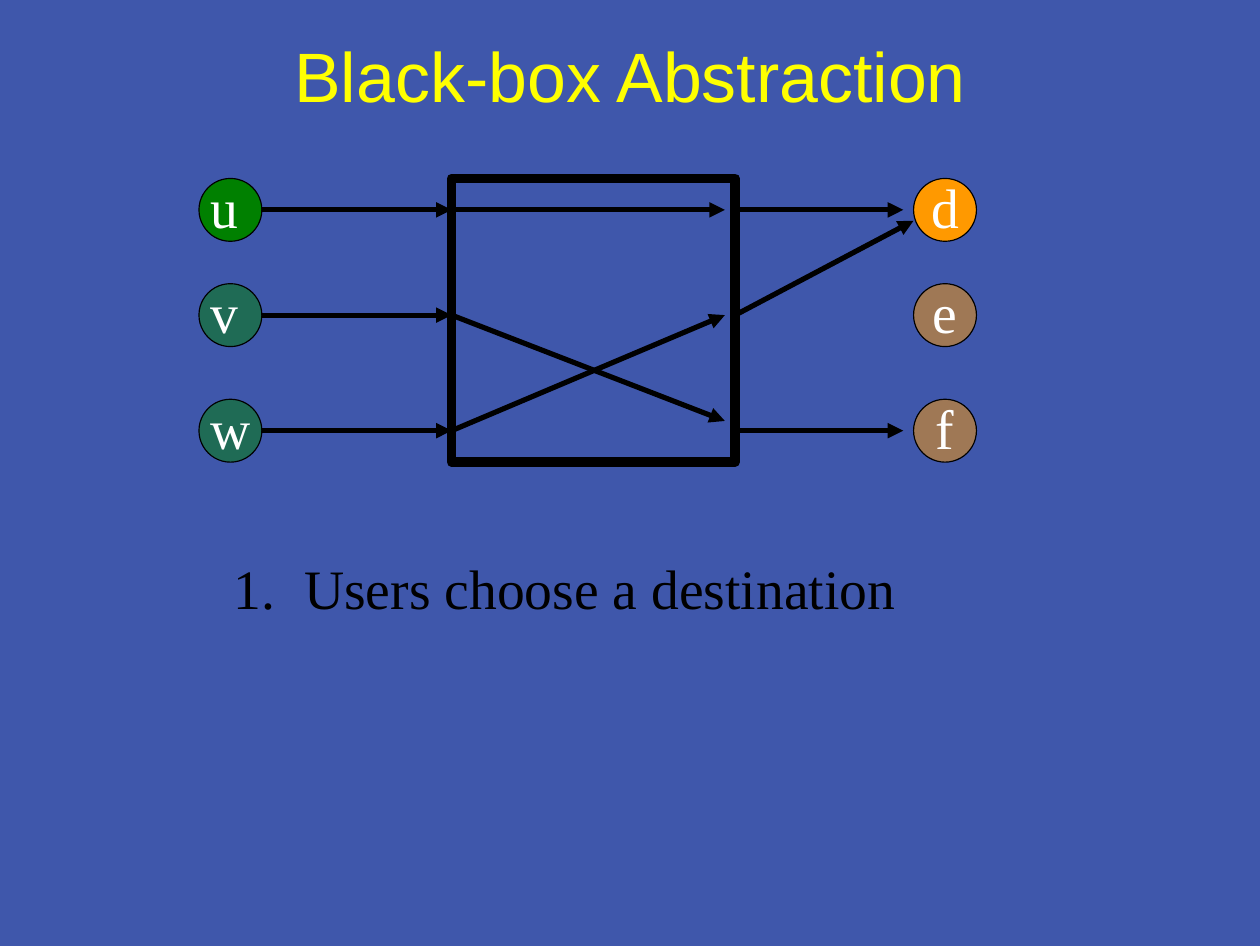
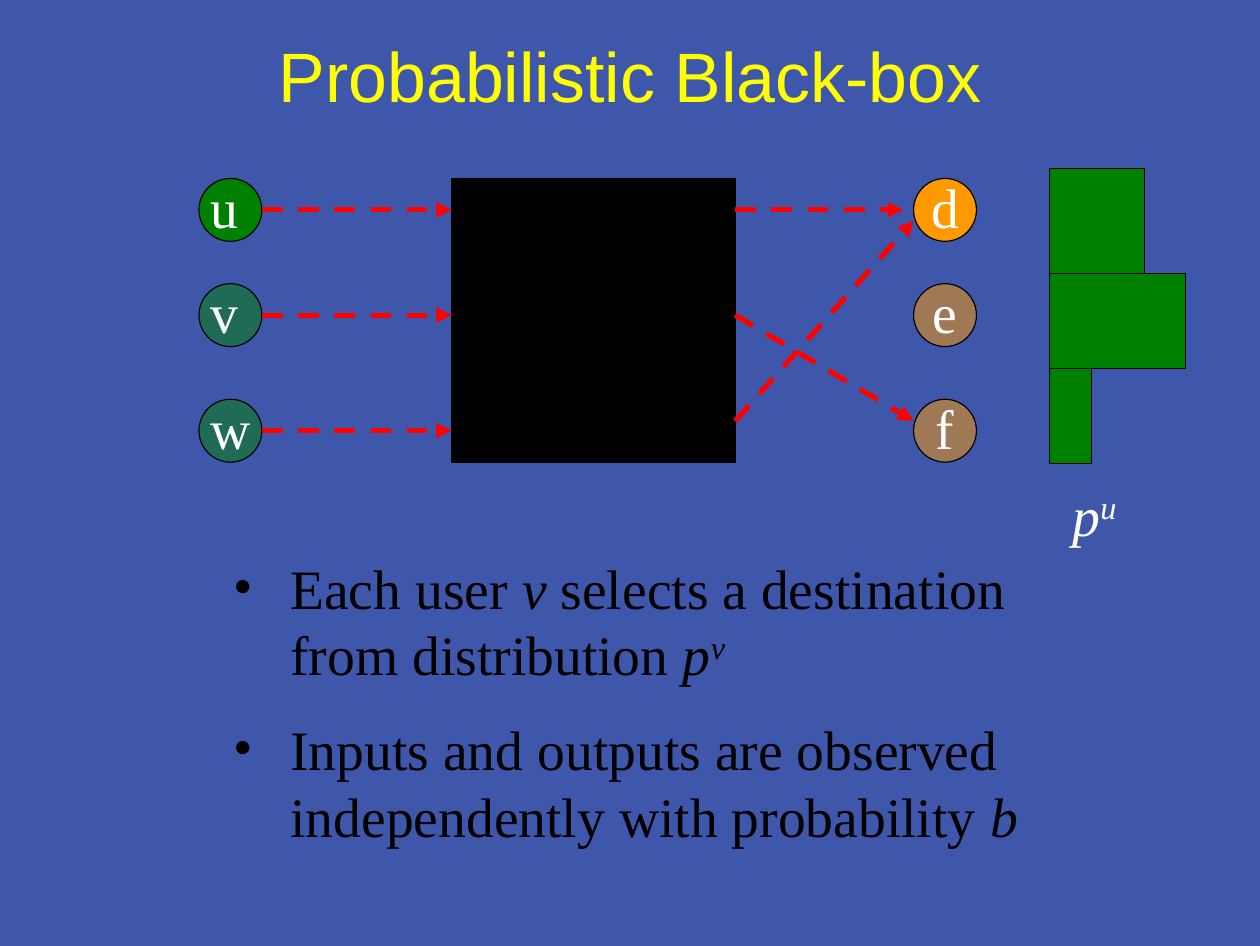
from lxml.etree import SubElement
from pptx import Presentation
from pptx.dml.color import RGBColor
from pptx.enum.dml import MSO_LINE
from pptx.enum.shapes import MSO_CONNECTOR, MSO_SHAPE
from pptx.enum.text import MSO_ANCHOR, MSO_AUTO_SIZE, PP_ALIGN
from pptx.oxml.ns import qn
from pptx.util import Inches, Pt

# Shared style
BLUE, YELLOW, BLACK, WHITE = "3F57AB", "FFFF00", "000000", "FFFFFF"
GREEN, ORANGE, RED = "008000", "FF9900", "FF0000"
TITLE_FONT, BODY_FONT = "Arial", "Times New Roman"

# Shared diagram geometry, in inches
NODE = 0.55
USER_X, DEST_X = 1.74, 7.99
ROW_TOPS = (1.56, 2.48, 3.49)
ROWS = [top + NODE / 2 for top in ROW_TOPS]
BOX_X, BOX_Y, BOX_SIZE = 3.95, 1.56, 2.48
BOX_RIGHT = BOX_X + BOX_SIZE
INNER_END, ARROW_END = 6.34, 7.9
LOW_EXIT, DEST_LOW = 3.68, 1.93


def rgb(value):
    return RGBColor.from_string(value)


def add_text(p, text, size=35, font=BODY_FONT, color=WHITE, italic=False,
             superscript=False):
    r = p.add_run()
    r.text = text
    r.font.size, r.font.name, r.font.italic = Pt(size), font, italic
    r.font.color.rgb = rgb(color)
    if superscript:
        r._r.get_or_add_rPr().set("baseline", "30000")


def set_frame(tf, left=0, top=0, right=0, bottom=0, anchor=MSO_ANCHOR.TOP,
              wrap=True):
    tf.margin_left, tf.margin_top = Inches(left), Inches(top)
    tf.margin_right, tf.margin_bottom = Inches(right), Inches(bottom)
    tf.vertical_anchor, tf.word_wrap = anchor, wrap
    tf.auto_size = MSO_AUTO_SIZE.NONE


def place(sp, x, y, w, h):
    sp.left, sp.top = Inches(x), Inches(y)
    sp.width, sp.height = Inches(w), Inches(h)


def add_slide(prs, title):
    s = prs.slides.add_slide(prs.slide_layouts[1])
    sp = s.shapes.title
    place(sp, 0.83, 0, 9.37, 1.38)
    set_frame(sp.text_frame, anchor=MSO_ANCHOR.MIDDLE)
    p = sp.text_frame.paragraphs[0]
    p.alignment, p.line_spacing = PP_ALIGN.CENTER, 0.95
    add_text(p, title, size=44, font=TITLE_FONT, color=YELLOW)
    return s


def add_list(s, width, height, items, indent=0.5, numbered=False):
    """Each item is a list of (text, format) pairs."""
    sp = s.placeholders[1]
    place(sp, 1.93, 4.78, width, height)
    tf = sp.text_frame
    set_frame(tf, 0.11, 0.06, 0.11, 0.06)
    for i, runs in enumerate(items):
        p = tf.add_paragraph() if i else tf.paragraphs[0]
        p.space_before = Pt(17.5 if i else 0)
        pPr = p._p.get_or_add_pPr()
        pPr.set("marL", str(Inches(indent)))
        pPr.set("indent", str(-Inches(indent)))
        SubElement(pPr, qn("a:buFont"), typeface=BODY_FONT)
        if numbered:
            SubElement(pPr, qn("a:buAutoNum"), type="arabicPeriod")
        else:
            SubElement(pPr, qn("a:buChar"), char="•")
        for text, style in runs:
            add_text(p, text, color=BLACK, **style)


def add_shape(s, kind, x, y, w, h, fill=None, alpha=100, line_width=0.75):
    sp = s.shapes.add_shape(kind, Inches(x), Inches(y), Inches(w), Inches(h))
    sp.shadow.inherit = False
    sp.line.color.rgb, sp.line.width = rgb(BLACK), Pt(line_width)
    if fill is None:
        sp.fill.background()
    else:
        sp.fill.solid()
        sp.fill.fore_color.rgb = rgb(fill)
    if alpha < 100:
        color = sp._element.spPr.find(qn("a:solidFill")).find(qn("a:srgbClr"))
        SubElement(color, qn("a:alpha"), val=str(alpha * 1000))
    return sp


def add_node(s, letter, x, y, fill, alpha):
    sp = add_shape(s, MSO_SHAPE.OVAL, x, y, NODE, NODE, fill, alpha)
    nudge = 0.1 if letter in "uv" else 0
    set_frame(sp.text_frame, right=nudge, bottom=0.06,
              anchor=MSO_ANCHOR.MIDDLE, wrap=False)
    p = sp.text_frame.paragraphs[0]
    p.alignment = PP_ALIGN.CENTER
    add_text(p, letter)


def add_nodes(s):
    for x, letters, fill in ((USER_X, "uvw", GREEN), (DEST_X, "def", ORANGE)):
        for i, letter in enumerate(letters):
            add_node(s, letter, x, ROW_TOPS[i], fill, 50 if i else 100)


def add_line(s, start, end, color=BLACK, width=3.25, dashed=False, arrow=True):
    cx = s.shapes.add_connector(MSO_CONNECTOR.STRAIGHT,
                                *(Inches(v) for v in (*start, *end)))
    cx.line.color.rgb, cx.line.width = rgb(color), Pt(width)
    if dashed:
        cx.line.dash_style = MSO_LINE.DASH
    spPr = cx._element.spPr
    if arrow:
        SubElement(spPr.find(qn("a:ln")), qn("a:tailEnd"), type="triangle")
    SubElement(spPr, qn("a:effectLst"))


def add_arrows(s, outputs, **style):
    """Draw one arrow from each user to the box, then the given arrows."""
    inputs = [((USER_X + NODE, y), (BOX_X, y)) for y in ROWS]
    for start, end in inputs + outputs:
        add_line(s, start, end, **style)


def add_box(s, **style):
    add_shape(s, MSO_SHAPE.RECTANGLE, BOX_X, BOX_Y, BOX_SIZE, BOX_SIZE, **style)


def add_distribution(s):
    x, y = 9.18, 1.47
    add_line(s, (x, BOX_Y), (x, BOX_Y + BOX_SIZE), width=0.75, arrow=False)
    for w, h in ((0.83, 0.92), (1.19, 0.83), (0.37, 0.83)):
        add_shape(s, MSO_SHAPE.RECTANGLE, x, y, w, h, GREEN)
        y += h
    label = s.shapes.add_textbox(Inches(9.27), Inches(4.14),
                                 Inches(0.92), Inches(0.7))
    set_frame(label.text_frame, 0.11, 0.06, 0.11, 0.06)
    p = label.text_frame.paragraphs[0]
    add_text(p, "p", italic=True)
    add_text(p, "u", italic=True, superscript=True)


def abstraction_slide(prs):
    s = add_slide(prs, "Black-box Abstraction")
    top, middle, bottom = ROWS
    add_nodes(s)
    add_box(s, line_width=6)
    add_arrows(s, [
        ((BOX_X, top), (INNER_END, top)),
        ((BOX_X, middle), (INNER_END, LOW_EXIT)),
        ((BOX_X, bottom), (INNER_END, middle)),
        ((BOX_RIGHT, top), (ARROW_END, top)),
        ((BOX_RIGHT, middle), (DEST_X, DEST_LOW)),
        ((BOX_RIGHT, bottom), (ARROW_END, bottom)),
    ])
    add_list(s, 6.52, 1.58, [[("Users choose a destination", {})]],
             indent=0.62, numbered=True)


def probabilistic_slide(prs):
    s = add_slide(prs, "Probabilistic Black-box")
    top, middle, _ = ROWS
    add_nodes(s)
    add_box(s, fill=BLACK)
    add_distribution(s)
    add_arrows(s, [
        ((BOX_RIGHT, top), (ARROW_END, top)),
        ((BOX_RIGHT, middle), (DEST_X, LOW_EXIT)),
        ((BOX_RIGHT, LOW_EXIT), (DEST_X, DEST_LOW)),
    ], color=RED, dashed=True)
    plain, italic = {}, {"italic": True}
    add_list(s, 7.62, 2.76, [
        [("Each user ", plain), ("v", italic),
         (" selects a destination from distribution ", plain), ("p", italic),
         ("v", {"italic": True, "superscript": True})],
        [("Inputs and outputs are observed independently with probability ",
          plain), ("b", italic)],
    ])


def main():
    prs = Presentation()
    prs.slide_width, prs.slide_height = Inches(11.02), Inches(8.27)
    background = prs.slide_master.background.fill
    background.solid()
    background.fore_color.rgb = rgb(BLUE)
    abstraction_slide(prs)
    probabilistic_slide(prs)
    prs.save("out.pptx")


if __name__ == "__main__":
    main()
